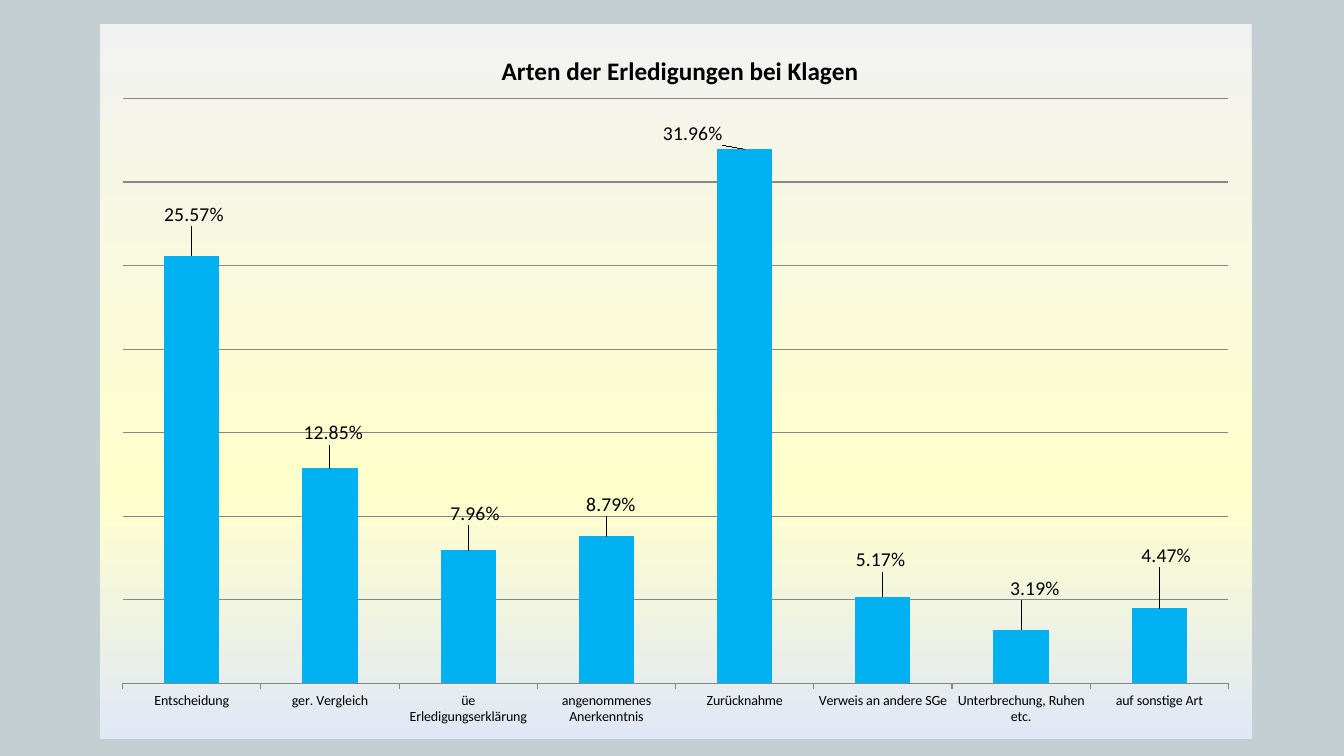
"""Build a slide with a column chart of how lawsuits were settled."""
from pptx import Presentation
from pptx.chart.data import CategoryChartData
from pptx.dml.color import RGBColor
from pptx.enum.chart import XL_CHART_TYPE as ChartType
from pptx.enum.chart import XL_LABEL_POSITION as LabelPosition
from pptx.enum.chart import XL_TICK_LABEL_POSITION as TickLabelPosition
from pptx.enum.chart import XL_TICK_MARK as TickMark
from pptx.oxml import parse_xml
from pptx.oxml.ns import nsdecls, qn
from pptx.util import Cm, Pt

COLORS = {"background": "C3CFD3", "text": "000000", "bar": "00B0F0", "line": "868686"}
GRADIENT = {0: "F2F2F2", 65: "FFFFCC", 100: "E1E8F5"}
PERCENT = "0.00%"
TITLE = "Arten der Erledigungen bei Klagen"
SETTLEMENTS = [
    ("Entscheidung", 0.2557, (0.2, -3.6)),
    ("ger. Vergleich", 0.1285, (0.3, -2.7)),
    ("üe Erledigungserklärung", 0.0796, (0.6, -2.9)),
    ("angenommenes Anerkenntnis", 0.0879, (0.4, -2.2)),
    ("Zurücknahme", 0.3196, (-4.5, 0)),
    ("Verweis an andere SGe", 0.0517, (-0.2, -2.9)),
    ("Unterbrechung, Ruhen etc.", 0.0319, (1.2, -3.5)),
    ("auf sonstige Art", 0.0447, (0.6, -5.2)),
]


def set_values(target, values):
    """Set each named attribute of the target."""
    for name, value in values.items():
        setattr(target, name, value)


def format_font(font, size, bold=False):
    """Apply the common font with the given size and weight."""
    set_values(font, {"name": "Calibri", "size": Pt(size), "bold": bold})
    font.color.rgb = RGBColor.from_string(COLORS["text"])


def format_line(line):
    """Apply the grey hairline of axis and grid."""
    line.color.rgb = RGBColor.from_string(COLORS["line"])
    line.width = Pt(0.75)


def place(parent, index, modes, percents):
    """Give a chart part a manual layout in percent of the chart size."""
    for layout in parent.findall(qn("c:layout")):
        parent.remove(layout)
    tags = "".join(f'<c:{mode}/>' if "=" not in mode else f"<c:{mode}/>" for mode in modes)
    tags += "".join(f'<c:{key} val="{value / 100:.4f}"/>' for key, value in zip("xywh", percents))
    parent.insert(index, parse_xml(
        f'<c:layout {nsdecls("c")}><c:manualLayout>{tags}</c:manualLayout></c:layout>'))


def fill_gradient(chart):
    """Fill the chart area with the vertical gradient."""
    stops = "".join(
        f'<a:gs pos="{position * 1000}"><a:srgbClr val="{color}"/></a:gs>'
        for position, color in GRADIENT.items())
    chart.element.find(qn("c:chart")).addnext(parse_xml(
        f'<c:spPr {nsdecls("c", "a")}><a:gradFill><a:gsLst>{stops}</a:gsLst>'
        '<a:lin ang="5400000" scaled="0"/></a:gradFill><a:ln><a:noFill/></a:ln></c:spPr>'))


def format_axes(chart):
    """Show categories and grid lines, and hide the value axis."""
    set_values(chart.value_axis, {
        "minimum_scale": 0, "maximum_scale": 0.35, "major_unit": 0.05,
        "has_major_gridlines": True, "visible": False})
    format_line(chart.value_axis.major_gridlines.format.line)
    set_values(chart.category_axis, {
        "major_tick_mark": TickMark.OUTSIDE, "minor_tick_mark": TickMark.NONE,
        "tick_label_position": TickLabelPosition.LOW})
    format_line(chart.category_axis.format.line)
    format_font(chart.category_axis.tick_labels.font, 10)


def format_labels(chart, series):
    """Show each share above its column, shifted by its own offset."""
    set_values(series.data_labels, {
        "show_value": True, "number_format": PERCENT, "number_format_is_linked": False,
        "position": LabelPosition.OUTSIDE_END})
    format_font(series.data_labels.font, 14)
    for index in range(len(SETTLEMENTS)):
        label = series.points[index].data_label
        format_font(label.font, 14)
        label.position = LabelPosition.OUTSIDE_END
    for label, (_, _, offset) in zip(chart.element.iter(qn("c:dLbl")), SETTLEMENTS):
        place(label, 1, [], offset)
        label.insert(2, parse_xml(
            f'<c:numFmt {nsdecls("c")} formatCode="{PERCENT}" sourceLinked="0"/>'))


def add_settlement_chart(slide):
    """Add the column chart with title, axes and labels."""
    data = CategoryChartData(number_format=PERCENT)
    data.categories = [name for name, _, _ in SETTLEMENTS]
    data.add_series("Series 1", [share for _, share, _ in SETTLEMENTS])
    chart = slide.shapes.add_chart(
        ChartType.COLUMN_CLUSTERED, Cm(2.51), Cm(0.61), Cm(29.03), Cm(18.01), data).chart
    format_font(chart.font, 10)
    set_values(chart, {"has_legend": False, "has_title": True})
    chart.chart_title.text_frame.text = TITLE
    format_font(chart.chart_title.text_frame.paragraphs[0].runs[0].font, 18, True)
    edges = ['xMode val="edge"', 'yMode val="edge"']
    place(chart.element.find(".//" + qn("c:title")), 1, edges, (34.5, 3.5))
    place(chart.element.find(".//" + qn("c:plotArea")), 0,
          ['layoutTarget val="inner"', *edges], (2, 10.4, 96, 81.8))
    plot = chart.plots[0]
    set_values(plot, {"gap_width": 150, "vary_by_categories": False})
    series = plot.series[0]
    series.format.fill.solid()
    series.format.fill.fore_color.rgb = RGBColor.from_string(COLORS["bar"])
    format_axes(chart)
    format_labels(chart, series)
    fill_gradient(chart)


def main():
    """Create the presentation and save it."""
    presentation = Presentation()
    set_values(presentation, {"slide_width": Cm(33.87), "slide_height": Cm(19.05)})
    slide = presentation.slides.add_slide(presentation.slide_layouts[6])
    slide.background.fill.solid()
    slide.background.fill.fore_color.rgb = RGBColor.from_string(COLORS["background"])
    add_settlement_chart(slide)
    presentation.save("out.pptx")


if __name__ == "__main__":
    main()
